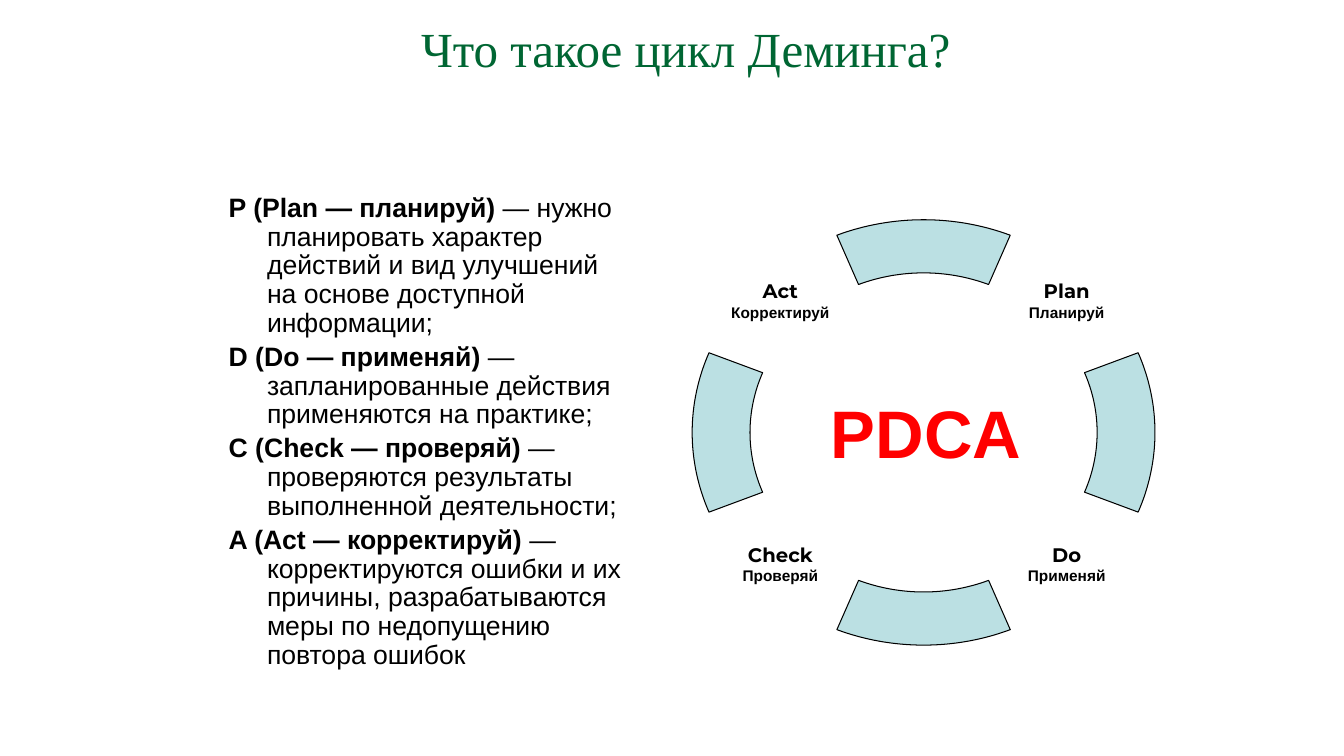
import math
from dataclasses import dataclass
from typing import Any

import lxml.etree
import pptx
import pptx.dml.color
import pptx.enum.text
import pptx.oxml.ns
import pptx.util

Inches = pptx.util.Inches
Pt = pptx.util.Pt
RGB = pptx.dml.color.RGBColor
ALIGN = pptx.enum.text.PP_ALIGN
ANCHOR = pptx.enum.text.MSO_ANCHOR
Point = tuple[float, float]


@dataclass(frozen=True)
class Theme:
    title: RGB = RGB(0x00, 0x66, 0x33)
    ink: RGB = RGB(0x00, 0x00, 0x00)
    accent: RGB = RGB(0xFF, 0x00, 0x00)
    segment: RGB = RGB(0xBB, 0xE0, 0xE3)
    title_size: float = 35
    body_size: float = 19
    stage_size: float = 14
    caption_size: float = 11
    centre_size: float = 48
    title_font: str = "Times New Roman"
    body_font: str = "Arial"
    stage_font: str = "Montserrat"


THEME = Theme()


@dataclass(frozen=True)
class Run:
    text: str
    size: float
    color: RGB = THEME.ink
    font: str = THEME.body_font
    bold: bool = False


@dataclass(frozen=True)
class Box:
    left: float
    top: float
    width: float
    height: float


@dataclass(frozen=True)
class Step:
    term: str
    meaning: str


@dataclass(frozen=True)
class Stage:
    name: str
    caption: str
    left: float
    top: float


@dataclass(frozen=True)
class Ring:
    cx: float = 9.16
    cy: float = 4.29
    width: float = 4.59
    height: float = 4.22
    inner: float = 0.75
    half_angle: int = 22


STEPS = [
    Step("P (Plan — планируй)",
         " — нужно планировать характер действий и вид улучшений на основе доступной информации;"),
    Step("D (Do — применяй)", " — запланированные действия применяются на практике;"),
    Step("С (Сheck — проверяй)", " — проверяются результаты выполненной деятельности;"),
    Step("A (Aсt — корректируй)",
         " — корректируются ошибки и их причины, разрабатываются меры по недопущению повтора ошибок"),
]
LEFT, RIGHT, UPPER, LOWER = 7.15, 9.99, 2.44, 5.05
STAGES = [
    Stage("Plan", "Планируй", RIGHT, UPPER),
    Stage("Act", "Корректируй", LEFT, UPPER),
    Stage("Check", "Проверяй", LEFT, LOWER),
    Stage("Do", "Применяй", RIGHT, LOWER),
]
CENTRED = {"alignment": ALIGN.CENTER}
STEP_FORMAT = {"line_spacing": 0.9, "space_before": Pt(3.8)}
HANGING_INDENT = {"marL": Inches(0.38), "indent": Inches(-0.38)}
STAGE_FRAME = {
    "vertical_anchor": ANCHOR.MIDDLE,
    "margin_left": Inches(0.08), "margin_right": Inches(0.08),
    "margin_top": Inches(0.04), "margin_bottom": Inches(0.04),
}


def apply(target: Any, values: dict[str, Any]) -> None:
    for name, value in values.items():
        setattr(target, name, value)


def add_text(s: Any, box: Box, paragraphs: list[list[Run]],
             paragraph_format: dict[str, Any], frame: dict[str, Any]) -> Any:
    sp = s.shapes.add_textbox(Inches(box.left), Inches(box.top),
                              Inches(box.width), Inches(box.height))
    tf = sp.text_frame
    apply(tf, {"word_wrap": True, **frame})
    for i, runs in enumerate(paragraphs):
        p = tf.add_paragraph() if i else tf.paragraphs[0]
        apply(p, paragraph_format)
        for run in runs:
            r = p.add_run()
            r.text = run.text
            apply(r.font, {"name": run.font, "size": Pt(run.size), "bold": run.bold})
            r.font.color.rgb = run.color
    return sp


def add_steps(s: Any) -> None:
    paragraphs = [[Run(step.term, THEME.body_size, bold=True),
                   Run(step.meaning, THEME.body_size)] for step in STEPS]
    sp = add_text(s, Box(2.17, 1.88, 4.11, 5.18), paragraphs, STEP_FORMAT, {})
    for p in sp.text_frame.paragraphs:
        for name, value in HANGING_INDENT.items():
            p._p.get_or_add_pPr().set(name, str(value))


def arc(width: float, height: float, scale: float, start: int, sweep: int) -> list[Point]:
    k = 4 / 3 * math.tan(math.radians(sweep) / 4)
    a, b = math.radians(start), math.radians(start + sweep)
    unit = [(math.cos(a), math.sin(a)),
            (math.cos(a) - k * math.sin(a), math.sin(a) + k * math.cos(a)),
            (math.cos(b) + k * math.sin(b), math.sin(b) - k * math.cos(b)),
            (math.cos(b), math.sin(b))]
    return [(width / 2 * (1 + scale * x), height / 2 * (1 + scale * y)) for x, y in unit]


def draw_outline(sp: Any, commands: list[tuple[str, list[Point]]]) -> None:
    qn = pptx.oxml.ns.qn
    outline = next(sp._element.iter(qn("a:path")))
    for child in list(outline):
        outline.remove(child)
    for command, points in commands:
        node = lxml.etree.SubElement(outline, qn(f"a:{command}"))
        for x, y in points:
            lxml.etree.SubElement(node, qn("a:pt"), x=str(Inches(x)), y=str(Inches(y)))


def add_segment(s: Any, ring: Ring, turn: int) -> None:
    w, h = (ring.height, ring.width) if turn % 2 else (ring.width, ring.height)
    left, top = Inches(ring.cx - w / 2), Inches(ring.cy - h / 2)
    right, bottom = left + Inches(w), top + Inches(h)
    builder = s.shapes.build_freeform(left, top)
    builder.add_line_segments([(right, top), (right, bottom), (left, bottom)])
    sp = builder.convert_to_shape()
    a = ring.half_angle
    inner = [arc(w, h, ring.inner, start, a) for start in (-90 - a, -90)]
    outer = [arc(w, h, 1, start, -a) for start in (-90 + a, -90)]
    draw_outline(sp, [
        ("moveTo", inner[0][:1]), *[("cubicBezTo", c[1:]) for c in inner],
        ("lnTo", outer[0][:1]), *[("cubicBezTo", c[1:]) for c in outer],
        ("close", []),
    ])
    sp.rotation = 90 * turn
    sp.shadow.inherit = False
    sp.fill.solid()
    sp.fill.fore_color.rgb = THEME.segment
    sp.line.color.rgb = THEME.ink
    sp.line.width = Pt(0.75)


def add_stage(s: Any, stage: Stage) -> None:
    name = Run(stage.name, THEME.stage_size, font=THEME.stage_font, bold=True)
    caption = Run(stage.caption, THEME.caption_size, bold=True)
    add_text(s, Box(stage.left, stage.top, 1.18, 1.08), [[name], [caption]],
             CENTRED, STAGE_FRAME)


def main() -> None:
    prs = pptx.Presentation()
    apply(prs, {"slide_width": Inches(13.33), "slide_height": Inches(7.5)})
    s = prs.slides.add_slide(prs.slide_layouts[6])
    title = Run("Что такое цикл Деминга?", THEME.title_size, THEME.title, THEME.title_font)
    add_text(s, Box(1.94, 0.13, 9.73, 1.42), [[title]], CENTRED, {})
    add_steps(s)
    for turn in range(4):
        add_segment(s, Ring(), turn)
    for stage in STAGES:
        add_stage(s, stage)
    centre = Run("PDCA", THEME.centre_size, THEME.accent, bold=True)
    add_text(s, Box(8.08, 3.83, 2.21, 0.9), [[centre]], CENTRED, {})
    prs.save("out.pptx")


if __name__ == "__main__":
    main()
